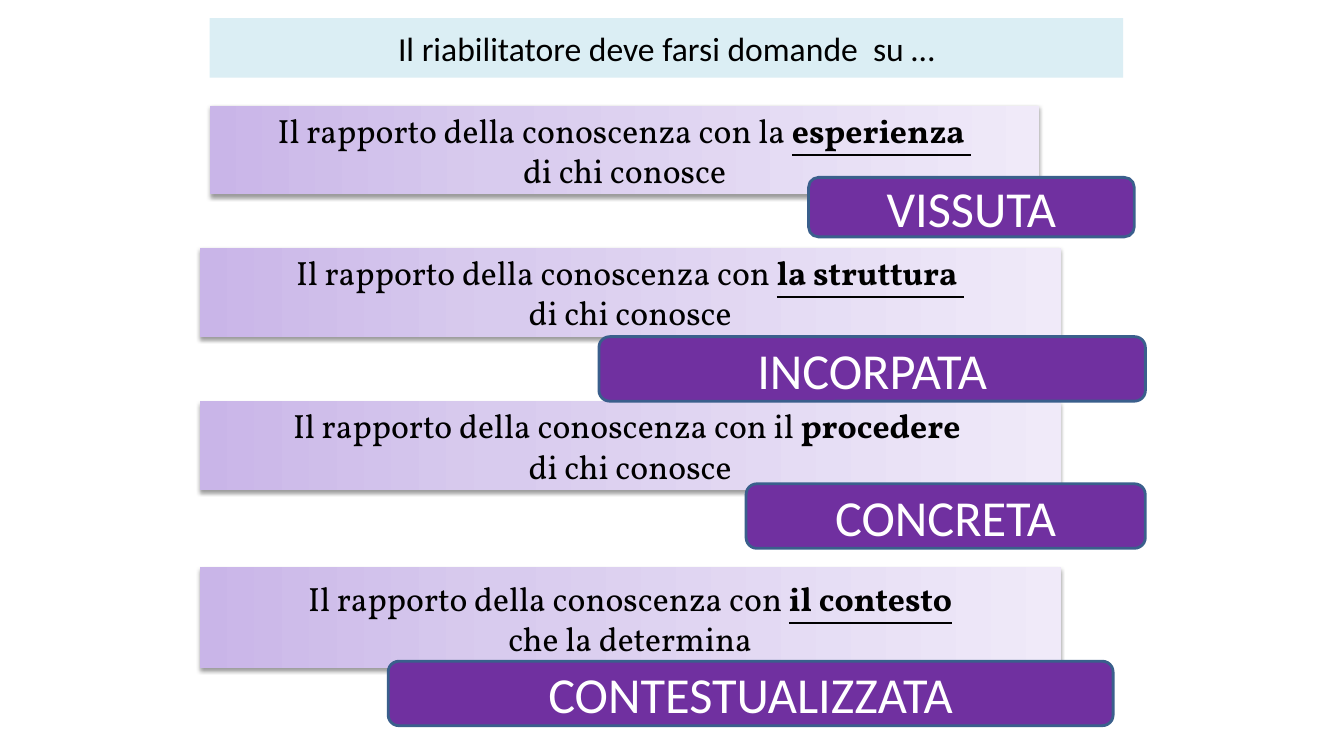
from dataclasses import dataclass

from lxml import etree
from pptx import Presentation
from pptx.dml.color import RGBColor
from pptx.enum.shapes import MSO_SHAPE
from pptx.enum.text import MSO_ANCHOR, PP_ALIGN
from pptx.oxml.ns import qn
from pptx.shapes.autoshape import Shape
from pptx.slide import Slide
from pptx.text.text import _Paragraph as Para
from pptx.util import Inches, Pt

RECT, ROUND = MSO_SHAPE.RECTANGLE, MSO_SHAPE.ROUNDED_RECTANGLE
MIDDLE, CENTER = MSO_ANCHOR.MIDDLE, PP_ALIGN.CENTER
TITLE_ONLY = 5


@dataclass(frozen=True)
class Theme:
    ink: str = "000000"
    paper: str = "FFFFFF"
    head: str = "DBEEF4"
    tag: str = "7030A0"
    edge: str = "3A5F8C"
    fade: tuple[tuple[int, str], ...] = ((0, "C9B5E8"), (35, "D8CBEE"), (100, "F0EAF9"))
    sans: str = "Calibri"
    serif: str = "Vollkorn"
    text: int = 24
    large: int = 36


@dataclass(frozen=True)
class Box:
    left: float
    top: float
    width: float
    height: float


@dataclass(frozen=True)
class Topic:
    bar: Box
    lead: str
    key: str
    lined: bool
    end: str
    tag: Box
    label: str


THEME = Theme()
HEAD = Box(2.08, 0.18, 9.06, 0.59)
LEAD = "Il rapporto della conoscenza con "
WHO = "di chi conosce"
TOPICS = [
    Topic(Box(2.08, 1.05, 8.23, 0.88), LEAD + "la ", "esperienza ", True, WHO,
          Box(8.02, 1.76, 3.23, 0.59), "VISSUTA"),
    Topic(Box(1.98, 2.46, 8.54, 0.88), LEAD, "la struttura ", True, WHO,
          Box(5.94, 3.34, 5.42, 0.64), "INCORPATA"),
    Topic(Box(1.98, 3.98, 8.54, 0.88), LEAD + "il ", "procedere ", False, WHO,
          Box(7.4, 4.8, 3.96, 0.64), "CONCRETA"),
    Topic(Box(1.98, 5.63, 8.54, 1), LEAD, "il contesto", True, "che la determina",
          Box(3.85, 6.56, 7.19, 0.64), "CONTESTUALIZZATA"),
]


def paint(shape: Shape, color: str) -> None:
    shape.fill.solid()
    shape.fill.fore_color.rgb = RGBColor.from_string(color)


def style(para: Para, face: str, size: int, color: str) -> None:
    para.alignment = CENTER
    para.font.name = face
    para.font.size = Pt(size)
    para.font.color.rgb = RGBColor.from_string(color)


def add_color(parent: etree._Element, color: str) -> etree._Element:
    return etree.SubElement(parent, qn("a:srgbClr"), val=color)


def add_fade(shape: Shape) -> None:
    """Fill the shape with the theme's gradient, from left to right."""
    shape.fill.gradient()
    shape.fill.gradient_angle = 0
    stops = shape._element.spPr.find(".//" + qn("a:gsLst"))
    for old in list(stops):
        stops.remove(old)
    for place, color in THEME.fade:
        add_color(etree.SubElement(stops, qn("a:gs"), pos=str(place * 1000)), color)


def add_shade(shape: Shape) -> None:
    """Give the shape a soft shadow just below it."""
    effects = shape._element.spPr.find(qn("a:effectLst"))
    shade = etree.SubElement(effects, qn("a:outerShdw"), blurRad=str(Pt(3.1)),
                             dist=str(Pt(1.6)), dir="5400000", rotWithShape="0")
    etree.SubElement(add_color(shade, THEME.ink), qn("a:alpha"), val="38000")


def add_box(slide: Slide, kind: MSO_SHAPE, box: Box) -> Shape:
    shape = slide.shapes.add_shape(kind, Inches(box.left), Inches(box.top),
                                   Inches(box.width), Inches(box.height))
    shape.shadow.inherit = False
    shape.text_frame.word_wrap = True
    shape.text_frame.vertical_anchor = MIDDLE
    return shape


def add_head(slide: Slide) -> None:
    head = slide.shapes.title
    head.left, head.top = Inches(HEAD.left), Inches(HEAD.top)
    head.width, head.height = Inches(HEAD.width), Inches(HEAD.height)
    paint(head, THEME.head)
    head.text_frame.text = "Il riabilitatore deve farsi domande  su …"
    head.text_frame.vertical_anchor = MIDDLE
    style(head.text_frame.paragraphs[0], THEME.sans, THEME.text, THEME.ink)


def add_bar(slide: Slide, topic: Topic) -> None:
    bar = add_box(slide, RECT, topic.bar)
    add_fade(bar)
    bar.line.fill.background()
    add_shade(bar)
    first = bar.text_frame.paragraphs[0]
    last = bar.text_frame.add_paragraph()
    for para in (first, last):
        style(para, THEME.serif, THEME.text, THEME.ink)
    first.add_run().text = topic.lead
    key = first.add_run()
    key.text = topic.key
    key.font.bold = True
    key.font.underline = topic.lined
    last.add_run().text = topic.end


def add_tag(slide: Slide, topic: Topic) -> None:
    tag = add_box(slide, ROUND, topic.tag)
    paint(tag, THEME.tag)
    tag.line.color.rgb = RGBColor.from_string(THEME.edge)
    tag.line.width = Pt(2)
    tag.text_frame.text = topic.label
    style(tag.text_frame.paragraphs[0], THEME.sans, THEME.large, THEME.paper)


def main() -> None:
    deck = Presentation()
    deck.slide_width, deck.slide_height = Inches(13.33), Inches(7.5)
    slide = deck.slides.add_slide(deck.slide_layouts[TITLE_ONLY])
    add_head(slide)
    for topic in TOPICS:
        add_bar(slide, topic)
    for topic in TOPICS:
        add_tag(slide, topic)
    deck.save("out.pptx")


if __name__ == "__main__":
    main()
